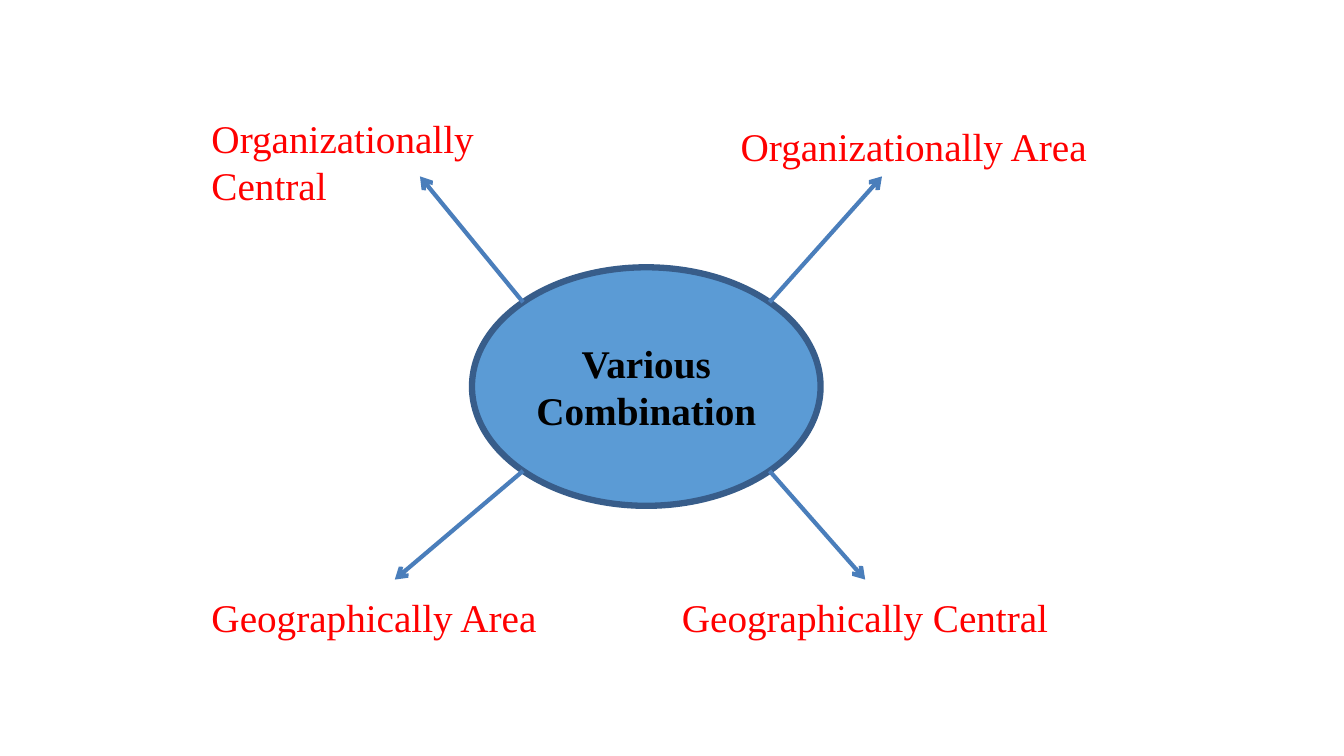
from dataclasses import dataclass
from math import sqrt

from lxml import etree
from pptx import Presentation
from pptx.dml.color import RGBColor
from pptx.enum.shapes import MSO_CONNECTOR, MSO_SHAPE
from pptx.enum.text import MSO_ANCHOR, MSO_AUTO_SIZE, PP_ALIGN
from pptx.oxml.ns import qn
from pptx.slide import Slide
from pptx.text.text import TextFrame
from pptx.util import Inches, Pt

ELLIPSE = MSO_SHAPE.OVAL
STRAIGHT = MSO_CONNECTOR.STRAIGHT
MIDDLE, TOP = MSO_ANCHOR.MIDDLE, MSO_ANCHOR.TOP
CENTER, LEFT = PP_ALIGN.CENTER, PP_ALIGN.LEFT
GROW, FIXED = MSO_AUTO_SIZE.SHAPE_TO_FIT_TEXT, MSO_AUTO_SIZE.NONE

BLUE = RGBColor(0x5B, 0x9B, 0xD5)
OUTLINE = RGBColor(0x38, 0x5D, 0x8A)
ARROW = RGBColor(0x4A, 0x7E, 0xBB)
RED = RGBColor(0xFF, 0x00, 0x00)
BLACK = RGBColor(0x00, 0x00, 0x00)

COLUMNS, ROWS = 160, 90
WIDTH, HEIGHT = Inches(13.33), Inches(7.5)
HUB_X, HUB_Y = 76.94, 46.02
HUB_WIDTH, HUB_HEIGHT = 41.5, 28.4
LABEL_HEIGHT = 6.84


@dataclass(frozen=True)
class Branch:
    label: str
    label_column: float
    label_row: float
    label_width: float
    side_x: int
    side_y: int
    tip_column: float
    tip_row: float


BRANCHES = (
    Branch("Organizationally Central", 24, 13, 48.36, -1, -1, 50, 21),
    Branch("Organizationally Area", 87, 14, 48.36, 1, -1, 105, 21),
    Branch("Geographically Area", 24, 70, 52.68, -1, 1, 47, 69),
    Branch("Geographically Central", 80, 70, 48.36, 1, 1, 103, 69),
)


def across(columns: float) -> int:
    return round(WIDTH * columns / COLUMNS)


def down(rows: float) -> int:
    return round(HEIGHT * rows / ROWS)


def write(frame: TextFrame, text: str, *, color: RGBColor, bold: bool = False,
          align: PP_ALIGN = LEFT, anchor: MSO_ANCHOR = TOP,
          fit: MSO_AUTO_SIZE = GROW) -> None:
    frame.word_wrap = True
    frame.auto_size = fit
    frame.vertical_anchor = anchor
    paragraph = frame.paragraphs[0]
    paragraph.alignment = align
    run = paragraph.add_run()
    run.text = text
    run.font.name = "Times New Roman"
    run.font.size = Pt(28)
    run.font.bold = bold
    run.font.color.rgb = color


def draw_hub(slide: Slide) -> None:
    hub = slide.shapes.add_shape(
        ELLIPSE, across(HUB_X - HUB_WIDTH / 2), down(HUB_Y - HUB_HEIGHT / 2),
        across(HUB_WIDTH), down(HUB_HEIGHT))
    hub.shadow.inherit = False
    hub.fill.solid()
    hub.fill.fore_color.rgb = BLUE
    hub.line.color.rgb = OUTLINE
    hub.line.width = Pt(4.5)
    write(hub.text_frame, "Various Combination", color=BLACK, bold=True,
          align=CENTER, anchor=MIDDLE, fit=FIXED)


def draw_arrow(slide: Slide, branch: Branch) -> None:
    start_column = HUB_X + branch.side_x * HUB_WIDTH / 2 / sqrt(2)
    start_row = HUB_Y + branch.side_y * HUB_HEIGHT / 2 / sqrt(2)
    arrow = slide.shapes.add_connector(
        STRAIGHT, across(start_column), down(start_row),
        across(branch.tip_column), down(branch.tip_row))
    arrow.line.color.rgb = ARROW
    arrow.line.width = Pt(3)
    properties = arrow.element.spPr
    etree.SubElement(properties.find(qn("a:ln")), qn("a:tailEnd"), type="arrow")
    etree.SubElement(properties, qn("a:effectLst"))


def draw_label(slide: Slide, branch: Branch) -> None:
    label = slide.shapes.add_textbox(
        across(branch.label_column), down(branch.label_row),
        across(branch.label_width), down(LABEL_HEIGHT))
    write(label.text_frame, branch.label, color=RED)


def main() -> None:
    presentation = Presentation()
    presentation.slide_width = WIDTH
    presentation.slide_height = HEIGHT
    slide = presentation.slides.add_slide(presentation.slide_layouts[6])
    draw_hub(slide)
    for branch in BRANCHES:
        draw_arrow(slide, branch)
        draw_label(slide, branch)
    presentation.save("out.pptx")


if __name__ == "__main__":
    main()
